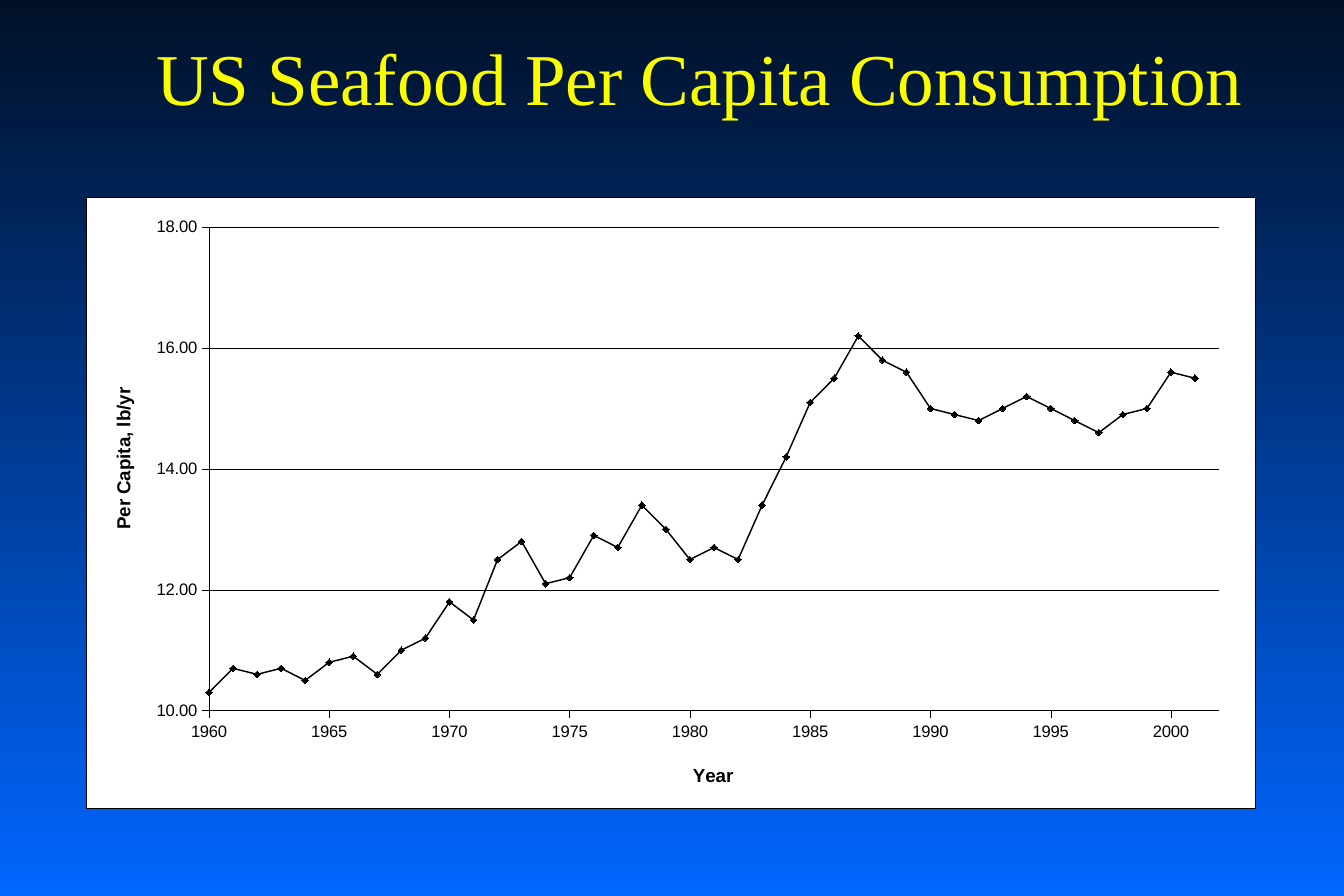
from lxml import etree
from pptx import Presentation
from pptx.chart.data import XyChartData
from pptx.dml.color import RGBColor
from pptx.enum.chart import XL_CHART_TYPE, XL_MARKER_STYLE, XL_TICK_MARK
from pptx.enum.text import MSO_ANCHOR, PP_ALIGN
from pptx.oxml import parse_xml
from pptx.oxml.ns import nsdecls, qn
from pptx.util import Inches, Pt

SCATTER = XL_CHART_TYPE.XY_SCATTER_LINES
DIAMOND = XL_MARKER_STYLE.DIAMOND
OUTSIDE, NO_TICK = XL_TICK_MARK.OUTSIDE, XL_TICK_MARK.NONE
MIDDLE, CENTER = MSO_ANCHOR.MIDDLE, PP_ALIGN.CENTER

NAVY = RGBColor(0x00, 0x10, 0x27)
BLUE = RGBColor(0x00, 0x66, 0xFF)
YELLOW = RGBColor(0xFA, 0xFD, 0x00)
BLACK = RGBColor(0, 0, 0)
WHITE = RGBColor(255, 255, 255)
HAIRLINE = Pt(0.22)

FIRST_YEAR = 1960
POUNDS = [
    10.3, 10.7, 10.6, 10.7, 10.5, 10.8, 10.9, 10.6, 11, 11.2,
    11.8, 11.5, 12.5, 12.8, 12.1, 12.2, 12.9, 12.7, 13.4, 13,
    12.5, 12.7, 12.5, 13.4, 14.2, 15.1, 15.5, 16.2, 15.8, 15.6,
    15, 14.9, 14.8, 15, 15.2, 15, 14.8, 14.6, 14.9, 15,
    15.6, 15.5,
]
YEAR_AXIS = {"minimum_scale": FIRST_YEAR, "maximum_scale": 2002,
             "major_unit": 5, "has_major_gridlines": False}
POUND_AXIS = {"minimum_scale": 10, "maximum_scale": 18,
              "major_unit": 2, "has_major_gridlines": True}


def apply(target, **values):
    for name, value in values.items():
        setattr(target, name, value)


def style_line(line, width=HAIRLINE):
    line.color.rgb = BLACK
    line.width = width


def place(element, position, **fractions):
    """Give a chart part a manual layout, in fractions of the chart."""
    for old in element.findall(qn("c:layout")):
        element.remove(old)
    layout = parse_xml(f'<c:layout {nsdecls("c")}><c:manualLayout/></c:layout>')
    values = {"xMode": "edge", "yMode": "edge", **fractions}
    for name, value in values.items():
        etree.SubElement(layout[0], qn(f"c:{name}")).set("val", str(value))
    element.insert(position, layout)


class SlideBuilder:
    def __init__(self, deck):
        self.title_font = "Times New Roman"
        self.chart_font = "Arial"
        self.page = deck.slides.add_slide(deck.slide_layouts[5])

    def background(self, top, bottom):
        fill = self.page.background.fill
        fill.gradient()
        fill.gradient_angle = 270
        for stop, color, position in zip(fill.gradient_stops, (top, bottom), (0, 1)):
            stop.color.rgb = color
            stop.position = position

    def title(self, text, left, top, width, height):
        box = self.page.shapes.title
        apply(box, left=left, top=top, width=width, height=height)
        apply(box.text_frame, text=text, vertical_anchor=MIDDLE, word_wrap=True)
        para = box.text_frame.paragraphs[0]
        para.alignment = CENTER
        span = para.runs[0]
        apply(span.font, name=self.title_font, size=Pt(44))
        span.font.color.rgb = YELLOW

    def font(self, font, size, bold=False):
        apply(font, name=self.chart_font, size=Pt(size), bold=bold)
        font.color.rgb = BLACK

    def axis(self, axis, title, settings, number_format, x, y):
        apply(axis, major_tick_mark=OUTSIDE, minor_tick_mark=NO_TICK, **settings)
        apply(axis.tick_labels, number_format=number_format,
              number_format_is_linked=False)
        self.font(axis.tick_labels.font, 10)
        style_line(axis.format.line)
        if axis.has_major_gridlines:
            style_line(axis.major_gridlines.format.line)
        frame = axis.axis_title.text_frame
        frame.text = title
        self.font(frame.paragraphs[0].runs[0].font, 11.25, bold=True)
        place(axis.axis_title._element, 1, x=x, y=y)

    def scatter(self, points, left, top, width, height):
        data = XyChartData()
        series_data = data.add_series("Series 1")
        for year, pounds in points:
            series_data.add_data_point(year, pounds)
        chart = self.page.shapes.add_chart(
            SCATTER, left, top, width, height, data).chart
        apply(chart, has_title=False, has_legend=False)
        self.font(chart.font, 14)
        self.chart_frame(chart)
        chart.plots[0].vary_by_categories = False

        series = chart.plots[0].series[0]
        series.smooth = False
        style_line(series.format.line, Pt(0.89))
        apply(series.marker, style=DIAMOND, size=4)
        series.marker.format.fill.solid()
        series.marker.format.fill.fore_color.rgb = BLACK
        style_line(series.marker.format.line)
        return chart

    def chart_frame(self, chart):
        """Fill and outline the chart area and fix the inner plot area."""
        space = chart._chartSpace
        space.find(qn("c:chart")).addnext(parse_xml(
            f'<c:spPr {nsdecls("c", "a")}>'
            f'<a:solidFill><a:srgbClr val="{WHITE}"/></a:solidFill>'
            f'<a:ln w="{HAIRLINE}"><a:solidFill><a:srgbClr val="{BLACK}"/>'
            '</a:solidFill></a:ln></c:spPr>'))
        plot_area = space.find(qn("c:chart")).find(qn("c:plotArea"))
        place(plot_area, 0, x=0.105, y=0.049, w=0.864, h=0.791)
        mode = parse_xml(f'<c:layoutTarget {nsdecls("c")} val="inner"/>')
        plot_area[0][0].insert(0, mode)


def main():
    deck = Presentation()
    apply(deck, slide_width=Inches(11.25), slide_height=Inches(7.5))
    slide = SlideBuilder(deck)
    slide.background(NAVY, BLUE)
    slide.title("US Seafood Per Capita Consumption",
                Inches(1.07), Inches(0), Inches(9.58), Inches(1.27))
    chart = slide.scatter(enumerate(POUNDS, FIRST_YEAR),
                          Inches(0.72), Inches(1.65), Inches(9.79), Inches(5.12))
    slide.axis(chart.category_axis, "Year", YEAR_AXIS, "General", 0.516, 0.92)
    slide.axis(chart.value_axis, "Per Capita, lb/yr", POUND_AXIS, "0.00", 0.018, 0.306)
    deck.save("out.pptx")


if __name__ == "__main__":
    main()
